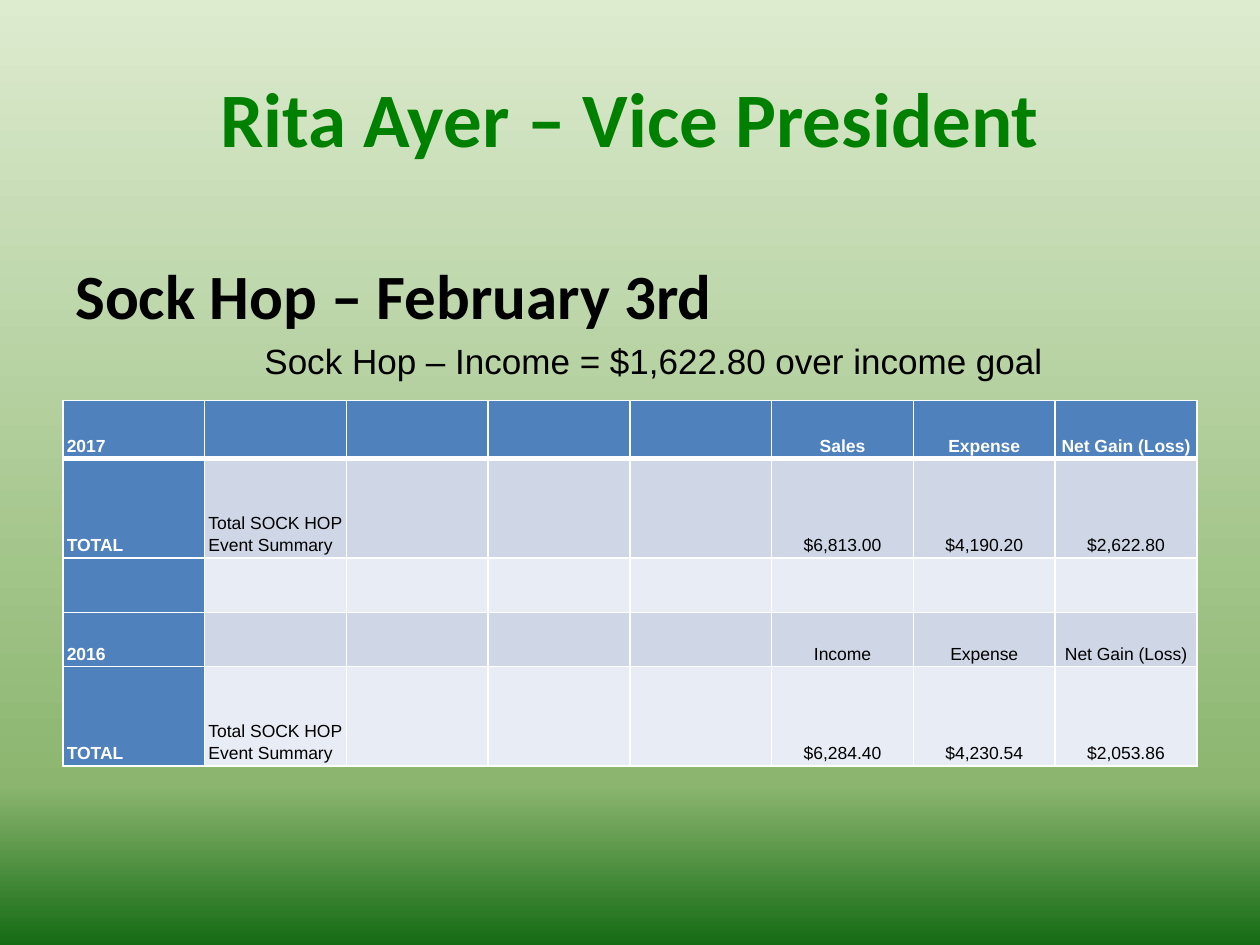
from copy import deepcopy

from lxml import etree
from pptx import Presentation
from pptx.dml.color import RGBColor
from pptx.enum import text
from pptx.oxml.ns import qn
from pptx.util import Inches, Pt

# Content
TITLE = "Rita Ayer – Vice President"
HEADING = "Sock Hop – February 3rd"
SUMMARY = "Sock Hop – Income = $1,622.80 over income goal"
EVENT = "Total SOCK HOP Event Summary"
ROWS = [
    ("2017", "", "", "", "", "Sales", "Expense", "Net Gain (Loss)"),
    ("TOTAL", EVENT, "", "", "", "$6,813.00", "$4,190.20", "$2,622.80"),
    ("", "", "", "", "", "", "", ""),
    ("2016", "", "", "", "", "Income", "Expense", "Net Gain (Loss)"),
    ("TOTAL", EVENT, "", "", "", "$6,284.40", "$4,230.54", "$2,053.86"),
]
ROW_HEIGHTS = [0.46, 0.79, 0.43, 0.43, 0.79]
FIRST_AMOUNT_COL = 5
GRADIENT = [(0, "DDEBCF"), (0.83, "8CB670"), (1, "156B13")]
HEADER_FILL, BAND_FILLS = "4F81BD", ("E8ECF4", "CFD7E7")
WHITE, BLACK, GREEN = "FFFFFF", "000000", "008000"


def rgb(value):
    return RGBColor.from_string(value)


def add_run(p, words, size, font, color, bold=False):
    r = p.add_run()
    r.text = words
    r.font.size, r.font.name, r.font.bold = Pt(size), font, bold
    r.font.color.rgb = rgb(color)


def add_text(s, left, top, width, height, anchor):
    tf = s.shapes.add_textbox(*map(Inches, (left, top, width, height))).text_frame
    tf.word_wrap = True
    tf.vertical_anchor = anchor
    return tf


def add_border(cell, side, width):
    ln = etree.SubElement(cell._tc.get_or_add_tcPr(), qn("a:ln" + side), w=str(Pt(width)))
    fill = etree.SubElement(ln, qn("a:solidFill"))
    etree.SubElement(fill, qn("a:srgbClr"), val=WHITE)


prs = Presentation()
prs.slide_width, prs.slide_height = Inches(10), Inches(7.5)
s = prs.slides.add_slide(prs.slide_layouts[6])

# Background gradient, top to bottom
fill = s.background.fill
fill.gradient()
fill.gradient_angle = 270
stops = s.element.find(".//" + qn("a:gsLst"))
stops.append(deepcopy(stops[-1]))
for stop, (position, color) in zip(fill.gradient_stops, GRADIENT):
    stop.position = position
    stop.color.rgb = rgb(color)

# Title
p = add_text(s, 0.5, 0.3, 9, 1.25, text.MSO_ANCHOR.MIDDLE).paragraphs[0]
p.alignment = text.PP_ALIGN.CENTER
add_run(p, TITLE, 44, "Calibri", GREEN, True)

# Heading and indented summary
tf = add_text(s, 0.5, 1.99, 9.11, 1.15, text.MSO_ANCHOR.TOP)
add_run(tf.paragraphs[0], HEADING, 36, "Calibri", BLACK, True)
p = tf.add_paragraph()
p.space_before = Pt(4)
p._p.get_or_add_pPr().set("marL", str(Inches(1.5)))
add_run(p, SUMMARY, 20, "Arial", BLACK)

# Results table
table = s.shapes.add_table(len(ROWS), len(ROWS[0]), Inches(0.5), Inches(3.18),
                           Inches(9), Inches(sum(ROW_HEIGHTS))).table
for row, height in zip(table.rows, ROW_HEIGHTS):
    row.height = Inches(height)

for i, values in enumerate(ROWS):
    for j, value in enumerate(values):
        cell = table.cell(i, j)
        header = i == 0 or j == 0
        cell.vertical_anchor = text.MSO_ANCHOR.BOTTOM
        cell.margin_left = cell.margin_right = Inches(0.03)
        cell.margin_top = cell.margin_bottom = Inches(0.02)
        for side in "LRTB":
            heavy = (i, side) in ((0, "B"), (1, "T"))
            add_border(cell, side, 3 if heavy else 1)
        cell.fill.solid()
        cell.fill.fore_color.rgb = rgb(HEADER_FILL if header else BAND_FILLS[i % 2])
        if value:
            p = cell.text_frame.paragraphs[0]
            p.line_spacing = 1.15
            if j >= FIRST_AMOUNT_COL:
                p.alignment = text.PP_ALIGN.CENTER
            add_run(p, value, 10, "Arial", WHITE if header else BLACK, header)
# Bands run odd, even, odd below the header, with the 2016 pair following on
prs.save("out.pptx")
